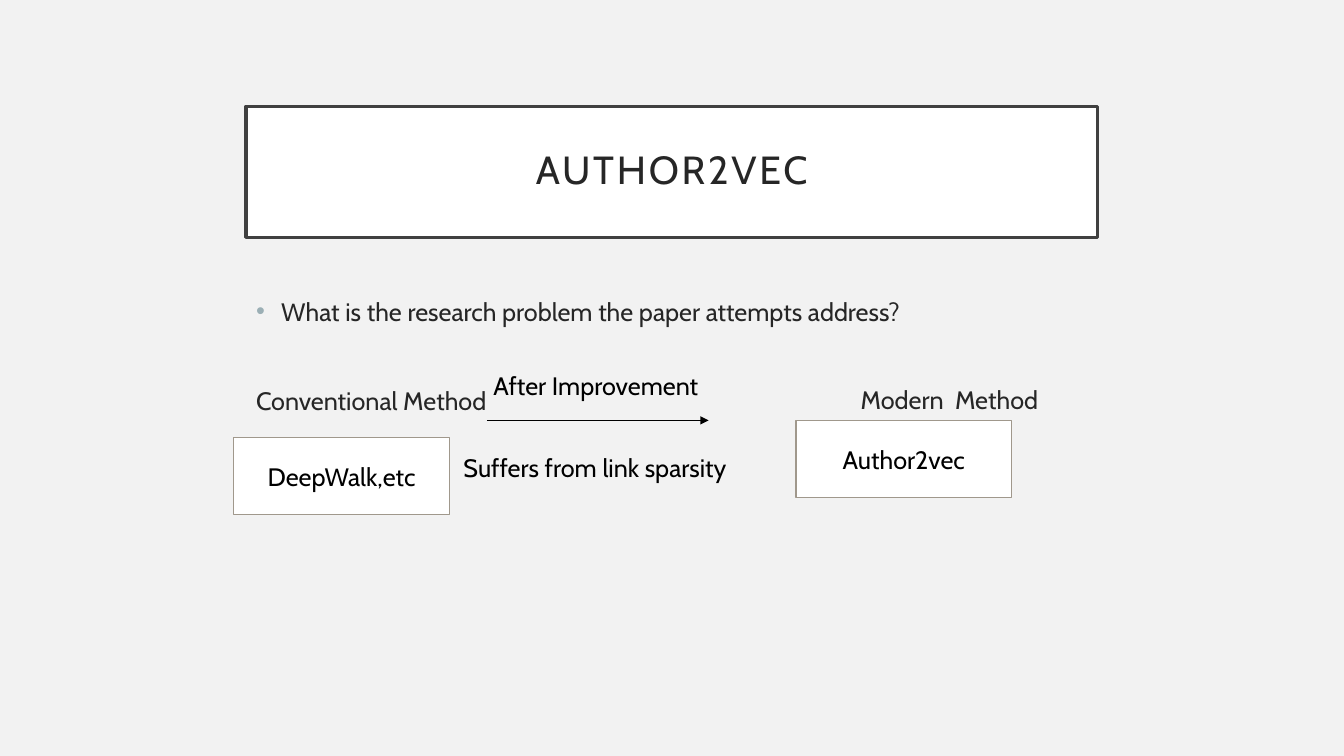
from typing import NamedTuple

from lxml import etree
from pptx import Presentation
from pptx.dml.color import RGBColor
from pptx.enum.shapes import MSO_CONNECTOR, MSO_SHAPE
from pptx.enum.text import MSO_ANCHOR, MSO_AUTO_SIZE, PP_ALIGN
from pptx.oxml.ns import qn
from pptx.util import Pt

RECTANGLE = MSO_SHAPE.RECTANGLE
STRAIGHT = MSO_CONNECTOR.STRAIGHT
MIDDLE, TOP = MSO_ANCHOR.MIDDLE, MSO_ANCHOR.TOP
CENTER, LEFT = PP_ALIGN.CENTER, PP_ALIGN.LEFT
FIT_SHAPE, NO_FIT = MSO_AUTO_SIZE.SHAPE_TO_FIT_TEXT, MSO_AUTO_SIZE.NONE

FONT = "Cabin"
BACKGROUND = RGBColor(0xF2, 0xF2, 0xF2)
WHITE = RGBColor(0xFF, 0xFF, 0xFF)
BLACK = RGBColor(0x00, 0x00, 0x00)
INK = RGBColor(0x26, 0x26, 0x26)
TITLE_BORDER = RGBColor(0x40, 0x40, 0x40)
BOX_BORDER = RGBColor(0xA0, 0x98, 0x8C)
BULLET = RGBColor(0x9B, 0xAF, 0xB5)


class Item(NamedTuple):
    text: str
    left: float
    top: float
    width: float
    height: float
    color: RGBColor = BLACK


METHOD_BOXES = [
    Item("DeepWalk,etc", 167, 312.5, 154, 55),
    Item("Author2vec", 568.6, 300.5, 154, 55),
]
LABELS = [
    Item("Suffers from link sparsity", 324, 319.4, 213, 29),
    Item("After Improvement", 345.4, 261, 164, 29),
    Item("Modern  Method", 607.7, 270.7, 141, 29, INK),
]


def place(shape, left: float, top: float, width: float, height: float) -> None:
    shape.left, shape.top = Pt(left), Pt(top)
    shape.width, shape.height = Pt(width), Pt(height)


def style_text(paragraph, size: float, color: RGBColor) -> None:
    for run in paragraph.runs:
        run.font.name = FONT
        run.font.size = Pt(size)
        run.font.color.rgb = color


def outline(shape, color: RGBColor, width: float) -> None:
    shape.fill.solid()
    shape.fill.fore_color.rgb = WHITE
    shape.line.color.rgb = color
    shape.line.width = Pt(width)


def add_method_box(slide, item: Item) -> None:
    box = slide.shapes.add_shape(RECTANGLE, *map(Pt, item[1:5]))
    box.shadow.inherit = False
    outline(box, BOX_BORDER, 1)
    frame = box.text_frame
    frame.text = item.text
    frame.vertical_anchor = MIDDLE
    frame.paragraphs[0].alignment = CENTER
    style_text(frame.paragraphs[0], 18, item.color)


def add_label(slide, item: Item) -> None:
    frame = slide.shapes.add_textbox(*map(Pt, item[1:5])).text_frame
    frame.text = item.text
    frame.word_wrap = False
    frame.auto_size = FIT_SHAPE
    style_text(frame.paragraphs[0], 18, item.color)


def main() -> None:
    deck = Presentation()
    deck.slide_width, deck.slide_height = Pt(960), Pt(540)
    slide = deck.slides.add_slide(deck.slide_layouts[1])
    slide.background.fill.solid()
    slide.background.fill.fore_color.rgb = BACKGROUND

    # Title
    title = slide.shapes.title
    place(title, 175.7, 75.9, 608.4, 93.6)
    outline(title, TITLE_BORDER, 2.5)
    heading = title.text_frame
    heading.text = "AUTHOR2VEC"
    heading.vertical_anchor = MIDDLE
    heading.auto_size = NO_FIT
    heading.margin_left = heading.margin_right = Pt(14.4)
    heading.margin_top = heading.margin_bottom = Pt(14.4)
    name = heading.paragraphs[0]
    name.alignment = CENTER
    name.line_spacing = 0.9
    style_text(name, 28, INK)
    name.runs[0].font._element.set("spc", "200")

    # Question and the first method heading
    body = slide.placeholders[1]
    place(body, 175.7, 207.7, 608.4, 244)
    content = body.text_frame
    content.text = ("What is the research problem the paper attempts address?\n"
                    "Conventional Method")
    content.auto_size = NO_FIT
    content.vertical_anchor = TOP
    question, conventional = content.paragraphs
    for paragraph, space, indent in ((question, 10, 18), (conventional, 42, 0)):
        paragraph.alignment = LEFT
        paragraph.space_before = Pt(space)
        style_text(paragraph, 18, INK)
        properties = paragraph._p.get_or_add_pPr()
        properties.set("marL", str(Pt(indent)))
        properties.set("indent", str(Pt(-indent)))

    properties = question._p.get_or_add_pPr()
    bullet_color = etree.SubElement(properties, qn("a:buClr"))
    etree.SubElement(bullet_color, qn("a:srgbClr"), val=str(BULLET))
    etree.SubElement(properties, qn("a:buFont"), typeface="Arial")
    etree.SubElement(properties, qn("a:buChar"), char="•")
    etree.SubElement(conventional._p.get_or_add_pPr(), qn("a:buNone"))

    # Method boxes
    for item in METHOD_BOXES:
        add_method_box(slide, item)

    # Improvement arrow
    arrow = slide.shapes.add_connector(
        STRAIGHT, Pt(347.8), Pt(300.25), Pt(506.2), Pt(300.25))
    arrow.line.color.rgb = BLACK
    arrow.line.width = Pt(0.5)
    etree.SubElement(arrow.line._get_or_add_ln(), qn("a:tailEnd"), type="triangle")
    etree.SubElement(arrow._element.spPr, qn("a:effectLst"))

    # Arrow labels and the second method heading
    for item in LABELS:
        add_label(slide, item)

    deck.save("out.pptx")


if __name__ == "__main__":
    main()
